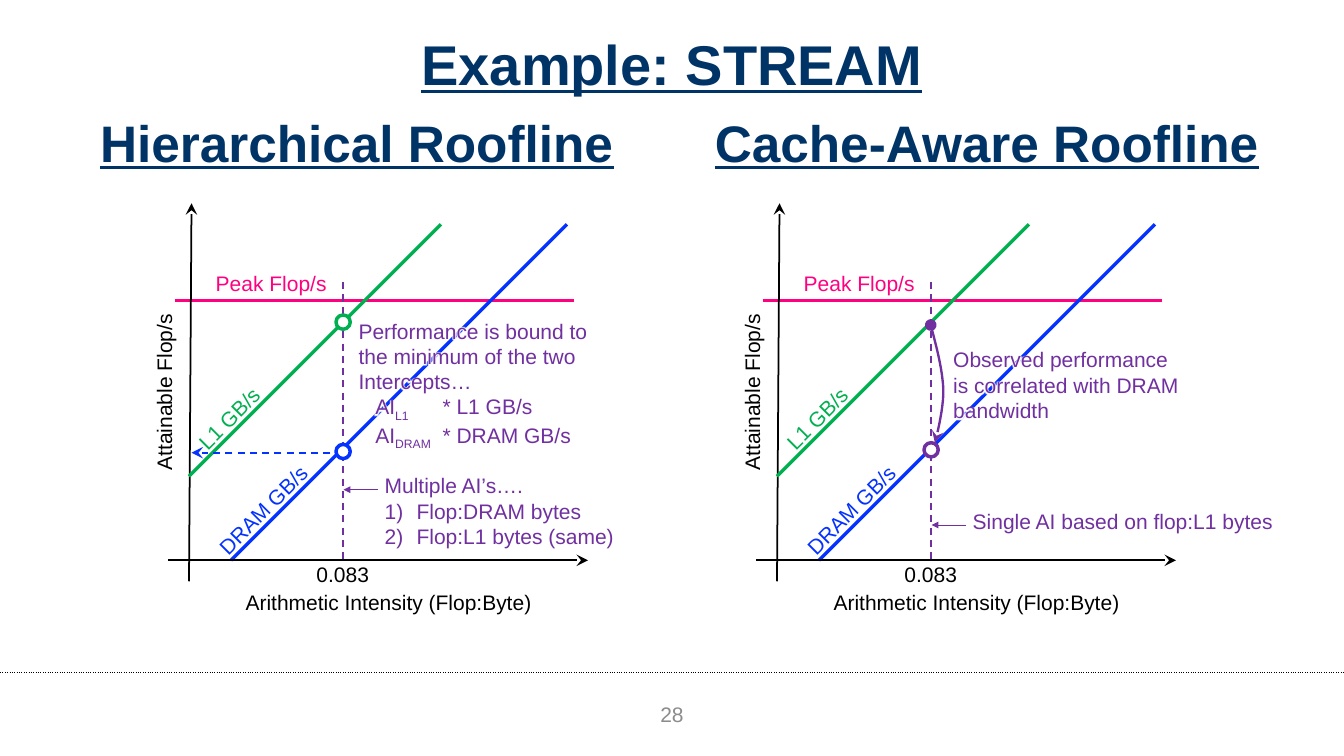
from lxml.etree import SubElement
from pptx import Presentation
from pptx.dml.color import RGBColor
from pptx.enum.shapes import MSO_CONNECTOR as Conn, MSO_SHAPE as Shape
from pptx.enum.text import MSO_ANCHOR as Anchor, PP_ALIGN as Align
from pptx.oxml import parse_xml
from pptx.oxml.ns import nsdecls, qn
from pptx.util import Inches, Pt

COLORS = {
    "navy": "003366", "gray": "8C8C8C", "black": "000000", "white": "FFFFFF",
    "pink": "FF0080", "blue": "0432FF", "green": "00B050", "purple": "7030A0",
}
FONT = "Arial"
COLS, ROWS = 16, 9
NO_INSETS = (0, 0, 0, 0)
WIDE_INSETS = (0.14, 0.07, 0.14, 0.07)
NOTE_INSETS = (0, 0.05, 0.1, 0.05)
DOT = 0.17


def rgb(name):
    return RGBColor.from_string(COLORS[name])


class Deck:
    """Draws on one slide; lengths are columns and rows of a 16 by 9 grid."""

    def __init__(self):
        self.prs = Presentation()
        self.prs.slide_width, self.prs.slide_height = Inches(16), Inches(9)
        self.col = self.prs.slide_width / COLS
        self.row = self.prs.slide_height / ROWS
        self.s = self.prs.slides.add_slide(self.prs.slide_layouts[6])

    def grid(self, *lengths):
        """Turn alternating columns and rows into slide units."""
        return [round(v * (self.row if i % 2 else self.col))
                for i, v in enumerate(lengths)]

    def pen(self, line, color, width, dash=None, head=None, tail=None, tip="lg"):
        line.color.rgb = rgb(color)
        line.width = Pt(width)
        ln = line._get_or_add_ln()
        if dash:
            SubElement(ln, qn("a:prstDash"), val=dash)
        for tag, kind in (("a:headEnd", head), ("a:tailEnd", tail)):
            if kind:
                SubElement(ln, qn(tag), type=kind, w=tip, len=tip)

    def line(self, x1, y1, x2, y2, color, width, **ends):
        c = self.s.shapes.add_connector(Conn.STRAIGHT, *self.grid(x1, y1, x2, y2))
        self.pen(c.line, color, width, **ends)
        SubElement(c._element.spPr, qn("a:effectLst"))

    def text(self, x, y, w, h, lines, color="black", size=18, align=Align.LEFT,
             anchor=Anchor.TOP, insets=(0.1, 0.05, 0.1, 0.05), rot=0,
             heading=False, halo=False):
        """Add lines of text; the part between two bars is a subscript."""
        sp = self.s.shapes.add_textbox(*self.grid(x, y, w, h))
        sp.rotation = rot
        tf = sp.text_frame
        tf.word_wrap = True
        tf.vertical_anchor = anchor
        (tf.margin_left, tf.margin_top,
         tf.margin_right, tf.margin_bottom) = self.grid(*insets)
        for i, content in enumerate(lines):
            p = tf.add_paragraph() if i else tf.paragraphs[0]
            p.alignment = align
            for j, part in enumerate(content.split("|")):
                r = p.add_run()
                r.text = part
                self.style(r, color, size, heading, halo)
                if j % 2:
                    r._r.get_or_add_rPr().set("baseline", "-25000")
        return tf

    def style(self, r, color, size, heading, halo):
        r.font.size = Pt(size)
        r.font.name = FONT
        r.font.color.rgb = rgb(color)
        if heading:
            r.font.bold = r.font.underline = True
        if halo:
            glow = parse_xml(
                f'<a:effectLst {nsdecls("a")}><a:glow rad="63500">'
                f'<a:srgbClr val="{COLORS["white"]}"/></a:glow></a:effectLst>')
            r._r.get_or_add_rPr().insert(1, glow)

    def indent(self, p, margin, first, number=None, tab=None):
        pPr = p._p.get_or_add_pPr()
        pPr.set("marL", str(Inches(margin)))
        pPr.set("indent", str(Inches(first)))
        if number:
            SubElement(pPr, qn("a:buAutoNum"), type=number)
        if tab:
            tabs = SubElement(pPr, qn("a:tabLst"))
            SubElement(tabs, qn("a:tab"), pos=str(Inches(tab)), algn="l")

    def dot(self, x, y, color):
        sp = self.s.shapes.add_shape(Shape.OVAL, *self.grid(x, y, DOT, DOT))
        sp.shadow.inherit = False
        sp.fill.solid()
        sp.fill.fore_color.rgb = rgb("white")
        self.pen(sp.line, color, 3)

    def curve(self, start, beziers, color, width, steps=12, **ends):
        """Draw an open outline through cubic pieces (control, control, end)."""
        points, p0 = [], start
        for p1, p2, p3 in beziers:
            for t in (k / steps for k in range(1, steps + 1)):
                u = 1 - t
                weights = (u ** 3, 3 * u * u * t, 3 * u * t * t, t ** 3)
                points.append(self.grid(*(
                    sum(f * v for f, v in zip(weights, axis))
                    for axis in zip(p0, p1, p2, p3))))
            p0 = p3
        fb = self.s.shapes.build_freeform(*self.grid(*start))
        fb.add_line_segments(points, close=False)
        sp = fb.convert_to_shape()
        sp.shadow.inherit = False
        sp.fill.background()
        self.pen(sp.line, color, width, **ends)

    def roofline(self, x, heading, heading_x):
        """Draw a heading and a roofline plot whose left edge is column x."""
        center = {"align": Align.CENTER}
        label = {**center, "anchor": Anchor.MIDDLE, "insets": NO_INSETS}
        self.text(heading_x, 1.25, 7.5, 0.75, [heading], "navy", 44,
                  insets=WIDE_INSETS, heading=True, **center)
        self.line(x + 2.08, 3.58, x + 6.83, 3.58, "pink", 3)
        self.text(x + 2.47, 3.17, 1.7, 0.4, ["Peak Flop/s"], "pink")
        self.line(x + 2.75, 6.67, x + 6.75, 2.67, "blue", 3)
        self.text(x + 2.34, 5.87, 1.58, 0.4, ["DRAM GB/s"], "blue", rot=315, **center)
        self.line(x + 2, 6.67, x + 7, 6.67, "black", 1.5, tail="stealth")
        self.line(x + 2.25, 6.92, x + 2.28, 2.42, "black", 1.5, tail="stealth")
        self.text(x, 4.42, 4, 0.5, ["Attainable Flop/s"], rot=270, **center)
        self.text(x + 2.25, 7, 4.75, 0.33, ["Arithmetic Intensity (Flop:Byte)"], **label)
        self.text(x + 3.58, 6.67, 1, 0.33, ["0.083"], **label)
        self.line(x + 2.25, 5.67, x + 5.25, 2.67, "green", 3)
        self.text(x + 2.12, 4.78, 1.21, 0.4, ["L1 GB/s"], "green", rot=315, **center)
        self.line(x + 4.08, 3.36, x + 4.08, 6.69, "purple", 1.5, dash="dash")

    def callout(self, x, y, lines):
        """Add a note with a small arrow pointing left from its first line."""
        self.line(x - 0.08, y + 0.25, x - 0.49, y + 0.25, "purple", 0.75,
                  tail="triangle", tip="med")
        return self.text(x, y, 4, 0.5, lines, "purple", insets=NOTE_INSETS)


def main():
    d = Deck()
    d.line(0, 8, COLS, 8, "black", 0.5, dash="dot")
    framed = {"align": Align.CENTER, "anchor": Anchor.MIDDLE, "insets": WIDE_INSETS}
    d.text(0.5, 0, 15, 1.5, ["Example: STREAM"], "navy", 48, heading=True, **framed)
    d.text(6.5, 8.25, 3, 0.5, ["28"], "gray", **framed)

    d.roofline(0, "Hierarchical Roofline", 0.5)
    tf = d.callout(4.58, 5.58, ["Multiple AI’s….", "Flop:DRAM bytes",
                                "Flop:L1 bytes (same)"])
    for p in tf.paragraphs[1:]:
        d.indent(p, 0.38, -0.38, number="arabicParenR")
    d.line(4.08, 5.39, 2.28, 5.39, "blue", 1.5, dash="dash", tail="stealth")
    note = {"color": "purple", "anchor": Anchor.MIDDLE, "halo": True}
    tf = d.text(4.17, 3.87, 3.2, 1.42, [
        "Performance is bound to", "the minimum of the two", "Intercepts…",
        "AI|L1|\t* L1 GB/s", "AI|DRAM|\t* DRAM GB/s"], **note)
    for p in tf.paragraphs[3:]:
        d.indent(p, 0, 0.2, tab=1)
    d.dot(4, 5.29, "blue")
    d.dot(4, 3.75, "green")

    d.roofline(7, "Cache-Aware Roofline", 8)
    d.callout(11.58, 6, ["Single AI based on flop:L1 bytes"])
    d.curve((11.08, 3.87), [((11.15, 4.13), (11.22, 4.4), (11.23, 4.63)),
                            ((11.24, 4.87), (11.13, 5.27), (11.13, 5.27))],
            "purple", 2, head="oval", tail="stealth")
    d.text(11.25, 3.87, 3.2, 1.42, ["Observed performance",
           "is correlated with DRAM", "bandwidth"], **note)
    d.dot(11, 5.27, "purple")
    d.prs.save("out.pptx")


if __name__ == "__main__":
    main()
